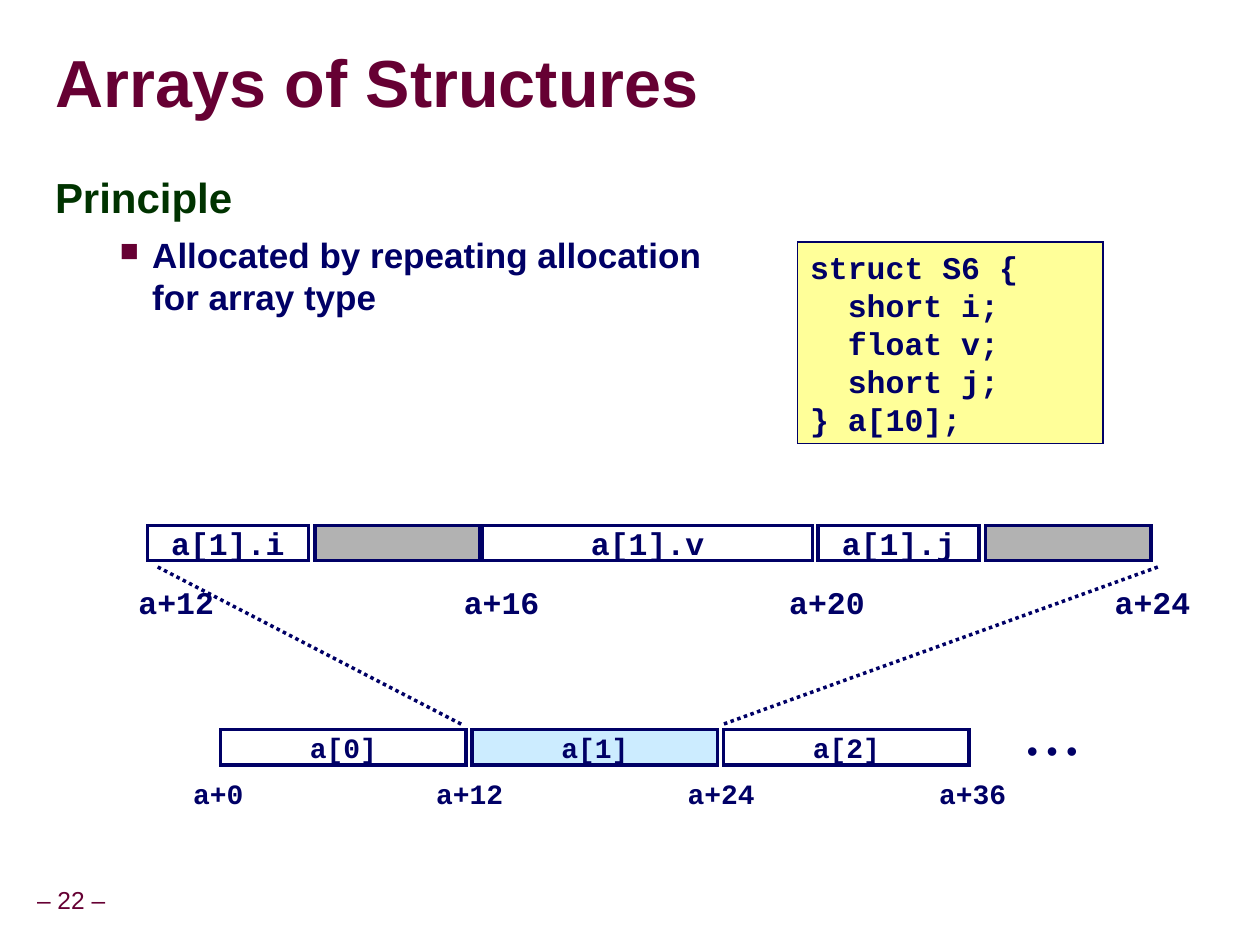
from lxml import etree
from pptx import Presentation
from pptx.dml.color import RGBColor
from pptx.enum import dml, shapes as kinds, text
from pptx.oxml import ns
from pptx.util import Cm, Pt

MAROON = RGBColor(0x66, 0x00, 0x33)
NAVY = RGBColor(0x00, 0x00, 0x66)
GREEN = RGBColor(0x00, 0x33, 0x00)
WHITE = RGBColor(0xFF, 0xFF, 0xFF)
GREY = RGBColor(0xB2, 0xB2, 0xB2)
YELLOW = RGBColor(0xFF, 0xFF, 0x99)
PALE_BLUE = RGBColor(0xCC, 0xEC, 0xFF)

SANS, MONO = "Arial", "Courier New"
LEFT, CENTER = text.PP_ALIGN.LEFT, text.PP_ALIGN.CENTER
TOP, MIDDLE = text.MSO_ANCHOR.TOP, text.MSO_ANCHOR.MIDDLE
CELL_HEIGHT = 0.71


def set_frame(frame, wrap=False, anchor=TOP, insets=(0.25, 0.13)):
    frame.word_wrap = wrap
    frame.vertical_anchor = anchor
    frame.margin_left = frame.margin_right = Cm(insets[0])
    frame.margin_top = frame.margin_bottom = Cm(insets[1])


def add_run(paragraph, words, size, font=MONO, color=NAVY, bold=True):
    run = paragraph.add_run()
    run.text = words
    run.font.size = Pt(size)
    run.font.name = font
    run.font.bold = bold
    run.font.color.rgb = color


def add_box(shapes, left, top, width, height):
    return shapes.add_textbox(Cm(left), Cm(top), Cm(width), Cm(height))


def add_label(shapes, left, top, width, height, words, size, align=LEFT, **style):
    frame = add_box(shapes, left, top, width, height).text_frame
    set_frame(frame)
    paragraph = frame.paragraphs[0]
    paragraph.alignment = align
    add_run(paragraph, words, size, **style)


def add_rectangle(shapes, left, top, width, height, fill, line_width=2):
    rectangle = shapes.add_shape(kinds.MSO_SHAPE.RECTANGLE,
                                 Cm(left), Cm(top), Cm(width), Cm(height))
    rectangle.shadow.inherit = False
    rectangle.fill.solid()
    rectangle.fill.fore_color.rgb = fill
    rectangle.line.color.rgb = NAVY
    rectangle.line.width = Pt(line_width)
    outline = rectangle._element.spPr.find(ns.qn("a:ln"))
    etree.SubElement(outline, ns.qn("a:miter"), lim="800000")
    return rectangle


def add_cell(shapes, left, top, width, fill, words, size):
    cell = add_rectangle(shapes, left, top, width, CELL_HEIGHT, fill)
    if words:
        set_frame(cell.text_frame, anchor=MIDDLE)
        paragraph = cell.text_frame.paragraphs[0]
        paragraph.alignment = CENTER
        add_run(paragraph, words, size)


def add_title(shapes, left, top, width, height):
    frame = add_box(shapes, left, top, width, height).text_frame
    set_frame(frame, wrap=True, anchor=MIDDLE, insets=(0, 0))
    frame.paragraphs[0].line_spacing = 0.87
    add_run(frame.paragraphs[0], "Arrays of Structures", 38, SANS, MAROON)


def set_indent(paragraph, margin, first_line):
    properties = paragraph._p.get_or_add_pPr()
    properties.set("marL", str(Cm(margin)))
    properties.set("indent", str(Cm(first_line)))
    return properties


def add_principle(shapes, left, top, width, height):
    frame = add_box(shapes, left, top, width, height).text_frame
    set_frame(frame, wrap=True)
    heading = frame.paragraphs[0]
    heading.line_spacing = 0.95
    heading.space_before = Pt(15)
    set_indent(heading, 1.07, -1.02)
    add_run(heading, "Principle", 24, SANS, GREEN)

    point = frame.add_paragraph()
    point.level = 1
    point.space_before = Pt(6.2)
    properties = set_indent(point, 2.01, -0.66)
    bullet_color = etree.SubElement(properties, ns.qn("a:buClr"))
    etree.SubElement(bullet_color, ns.qn("a:srgbClr"), val=str(MAROON))
    etree.SubElement(properties, ns.qn("a:buSzPct"), val="75000")
    etree.SubElement(properties, ns.qn("a:buChar"), char="■")
    add_run(point, "Allocated by repeating allocation for array type", 20, SANS)


def add_declaration(shapes, left, top, width, height):
    panel = add_rectangle(shapes, left, top, width, height, YELLOW, 1)
    frame = panel.text_frame
    set_frame(frame, wrap=True)
    code = ["struct S6 {", "  short i;", "  float v;", "  short j;", "} a[10];"]
    for number, line in enumerate(code):
        paragraph = frame.add_paragraph() if number else frame.paragraphs[0]
        paragraph.alignment = LEFT
        add_run(paragraph, line, 18)


def add_element_row(shapes, left, top):
    """The array elements with the byte offset of each boundary."""
    pitch, width, label_width = 5.07, 4.95, 2.2
    for index, fill in enumerate([WHITE, PALE_BLUE, WHITE]):
        add_cell(shapes, left + index * pitch, top, width, fill, f"a[{index}]", 16)
    for index in range(4):
        center = left + index * pitch - 0.05
        add_label(shapes, center - label_width / 2, top + 0.81, label_width, 0.91,
                  f"a+{12 * index}", 16, CENTER)
    add_label(shapes, left + 16, top - 0.1, 1.52, 1.02, "•\u00a0•\u00a0•", 18,
              font=SANS, bold=False)


def add_field_row(shapes, left, top):
    """The fields and padding inside one element, drawn to byte scale."""
    byte_width = 1.69
    fields = [("a[1].i", 2, 3.25), (None, 2, 3.33), ("a[1].v", 4, 6.65),
              ("a[1].j", 2, 3.25), (None, 2, 3.33)]
    offset = 0
    for name, size, width in fields:
        add_cell(shapes, left + offset * byte_width, top, width,
                 WHITE if name else GREY, name, 18)
        offset += size


def add_field_offsets(shapes, left, top):
    for index in range(4):
        add_label(shapes, left + index * 6.56, top, 2.03, 1.02, f"a+{12 + 4 * index}", 18)


def add_zoom_lines(shapes, top, bottom, edges):
    for upper, lower in edges:
        line = shapes.add_connector(kinds.MSO_CONNECTOR.STRAIGHT,
                                    Cm(upper), Cm(top), Cm(lower), Cm(bottom))
        line.line.color.rgb = NAVY
        line.line.width = Pt(2)
        line.line.dash_style = dml.MSO_LINE.ROUND_DOT
        etree.SubElement(line._element.spPr, ns.qn("a:effectLst"))


def add_page_number(shapes, left, top, width, height):
    frame = add_box(shapes, left, top, width, height).text_frame
    set_frame(frame, anchor=MIDDLE, insets=(0.13, 0.13))
    frame.paragraphs[0].alignment = CENTER
    frame.paragraphs[0].line_spacing = 0.9
    add_run(frame.paragraphs[0], "– 22 –", 14, SANS, MAROON, False)


def main():
    deck = Presentation()
    deck.slide_width, deck.slide_height = Cm(25.4), Cm(19.05)
    slide = deck.slides.add_slide(deck.slide_layouts[6])
    shapes = slide.shapes
    add_page_number(shapes, -0.23, 17.75, 3.33, 0.86)
    add_element_row(shapes.add_group_shape().shapes, 4.45, 14.71)
    add_zoom_lines(shapes, 11.43, 14.61, [(3.18, 9.32), (23.34, 14.55)])
    add_field_offsets(shapes, 2.54, 11.63)
    add_declaration(shapes, 16.08, 4.88, 6.15, 4.06)
    add_field_row(shapes.add_group_shape().shapes, 2.97, 10.59)
    add_title(shapes, 1.12, 0.69, 24.16, 2.11)
    add_principle(shapes, 0.81, 3.4, 14.66, 14.45)
    deck.save("out.pptx")


if __name__ == "__main__":
    main()
